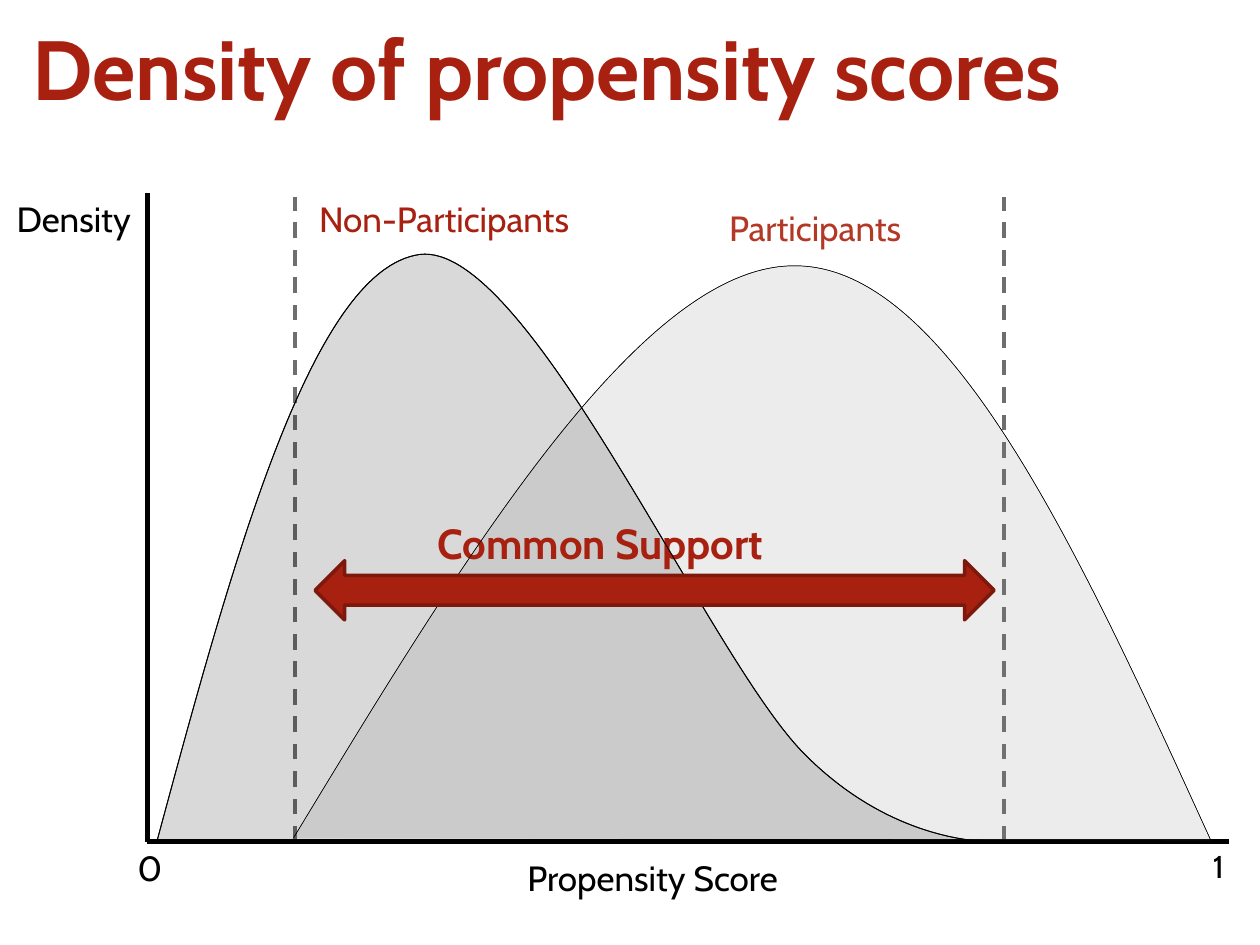
import pptx
import pptx.dml.color
import pptx.enum.dml
import pptx.enum.shapes
import pptx.enum.text
import pptx.oxml
import pptx.oxml.ns
import pptx.util

Inches = pptx.util.Inches
Pt = pptx.util.Pt
RGBColor = pptx.dml.color.RGBColor

FONT = "Cabin"
RED = RGBColor(0xA8, 0x20, 0x10)
LIGHT_RED = RGBColor(0xB3, 0x38, 0x26)
DARK_RED = RGBColor(0x7C, 0x18, 0x0C)
BLACK = RGBColor(0, 0, 0)
GRAY = RGBColor(0x80, 0x80, 0x80)
DASH_GRAY = RGBColor(0x6E, 0x6E, 0x6E)
WHITE = RGBColor(0xFF, 0xFF, 0xFF)

AXIS_LEFT, AXIS_RIGHT = 1.17, 9.75
AXIS_TOP, BASELINE = 1.53, 6.68
SUPPORT_LIMITS = (2.34, 7.97)
FILL_OPACITY = 15

NON_PARTICIPANTS = [
    (1.25, 6.66), (1.86, 4.4), (2.48, 2.14), (3.33, 2.02),
    (4.19, 1.91), (5.61, 5.2), (6.38, 5.98),
    (7.15, 6.76), (7.97, 6.68), (7.97, 6.68),
]
PARTICIPANTS = [
    (2.33, 6.65), (3.71, 4.37), (5.1, 2.1), (6.31, 2.11),
    (7.53, 2.11), (8.57, 4.39), (9.61, 6.67),
]


def format_text(frame, text, size, color, bold, align):
    frame.text = text
    frame.word_wrap = True
    para = frame.paragraphs[0]
    para.alignment = align
    font = para.runs[0].font
    font.name = FONT
    font.size = Pt(size)
    font.bold = bold
    font.color.rgb = color


def add_title(page, text):
    title = page.shapes.title
    title.left, title.top = Inches(0.16), Inches(0.08)
    title.width, title.height = Inches(9.69), Inches(0.94)
    format_text(title.text_frame, text, 48, RED, True,
                pptx.enum.text.PP_ALIGN.LEFT)
    title.text_frame.auto_size = pptx.enum.text.MSO_AUTO_SIZE.NONE
    title.text_frame.vertical_anchor = pptx.enum.text.MSO_ANCHOR.TOP


def add_label(page, text, left, top, width, height=0.44, size=20,
              color=BLACK, bold=False, fill=None):
    box = page.shapes.add_textbox(
        Inches(left), Inches(top), Inches(width), Inches(height))
    if fill is not None:
        box.fill.solid()
        box.fill.fore_color.rgb = fill
    format_text(box.text_frame, text, size, color, bold,
                pptx.enum.text.PP_ALIGN.CENTER)


def add_line(page, start, end, color, width, dash=None):
    line = page.shapes.add_connector(
        pptx.enum.shapes.MSO_CONNECTOR.STRAIGHT,
        *(Inches(value) for value in start + end))
    line.line.color.rgb = color
    line.line.width = Pt(width)
    line.line.dash_style = dash
    properties = line._element.spPr
    properties.append(pptx.oxml.parse_xml(
        f"<a:effectLst {pptx.oxml.ns.nsdecls('a')}/>"))


def bend_segments(shape):
    segments = list(shape._element.iter(pptx.oxml.ns.qn("a:lnTo")))
    for first in range(0, len(segments), 3):
        bend = pptx.oxml.parse_xml(
            f"<a:cubicBezTo {pptx.oxml.ns.nsdecls('a')}/>")
        segments[first].addprevious(bend)
        for segment in segments[first:first + 3]:
            bend.append(segment[0])
            segment.getparent().remove(segment)


def add_density(page, controls, line_width, fill=None):
    points = [(Inches(x), Inches(y)) for x, y in controls]
    builder = page.shapes.build_freeform(*points[0])
    builder.add_line_segments(points[1:], close=False)
    curve = builder.convert_to_shape()
    bend_segments(curve)
    curve.shadow.inherit = False
    curve.line.color.rgb = BLACK
    curve.line.width = Pt(line_width)
    if fill is None:
        curve.fill.background()
        return
    curve.fill.solid()
    curve.fill.fore_color.rgb = fill
    color = curve._element.spPr.find(
        f"{pptx.oxml.ns.qn('a:solidFill')}/{pptx.oxml.ns.qn('a:srgbClr')}")
    color.append(pptx.oxml.parse_xml(
        f"<a:alpha {pptx.oxml.ns.nsdecls('a')} val='{FILL_OPACITY * 1000}'/>"))


def add_support_arrow(page):
    arrow = page.shapes.add_shape(
        pptx.enum.shapes.MSO_SHAPE.LEFT_RIGHT_ARROW,
        Inches(2.5), Inches(4.45), Inches(5.39), Inches(0.47))
    arrow.shadow.inherit = False
    arrow.fill.solid()
    arrow.fill.fore_color.rgb = RED
    arrow.line.color.rgb = DARK_RED
    arrow.line.width = Pt(2)


def main():
    deck = pptx.Presentation()
    deck.slide_width, deck.slide_height = Inches(10), Inches(7.5)
    page = deck.slides.add_slide(deck.slide_layouts[5])

    add_title(page, "Density of propensity scores")
    add_label(page, "Density", 0, 1.52, 1.17, fill=WHITE)
    add_label(page, "Propensity Score", 3.98, 6.75, 2.4, fill=WHITE)
    add_label(page, "0", 0.94, 6.67, 0.5)
    add_label(page, "1", 9.42, 6.67, 0.5, height=0.4, size=18)
    add_label(page, "Participants", 5.63, 1.59, 1.68,
              color=LIGHT_RED, fill=WHITE)
    add_label(page, "Non-Participants", 2.34, 1.52, 2.37,
              color=RED, fill=WHITE)

    for limit in SUPPORT_LIMITS:
        add_line(page, (limit, BASELINE), (limit, 1.56), DASH_GRAY, 2.25,
                 pptx.enum.dml.MSO_LINE.DASH)
    origin = (AXIS_LEFT, BASELINE)
    add_line(page, origin, (AXIS_RIGHT, BASELINE), BLACK, 3)
    add_line(page, origin, (AXIS_LEFT, AXIS_TOP), BLACK, 3)

    add_density(page, NON_PARTICIPANTS, 0.5, BLACK)
    add_density(page, PARTICIPANTS, 0.25, GRAY)
    add_label(page, "Common Support", 2.97, 4.06, 3.59, height=0.5,
              size=24, color=RED, bold=True)
    add_density(page, PARTICIPANTS, 0.25)
    add_density(page, NON_PARTICIPANTS, 0.5)
    add_support_arrow(page)

    deck.save("out.pptx")


if __name__ == "__main__":
    main()
